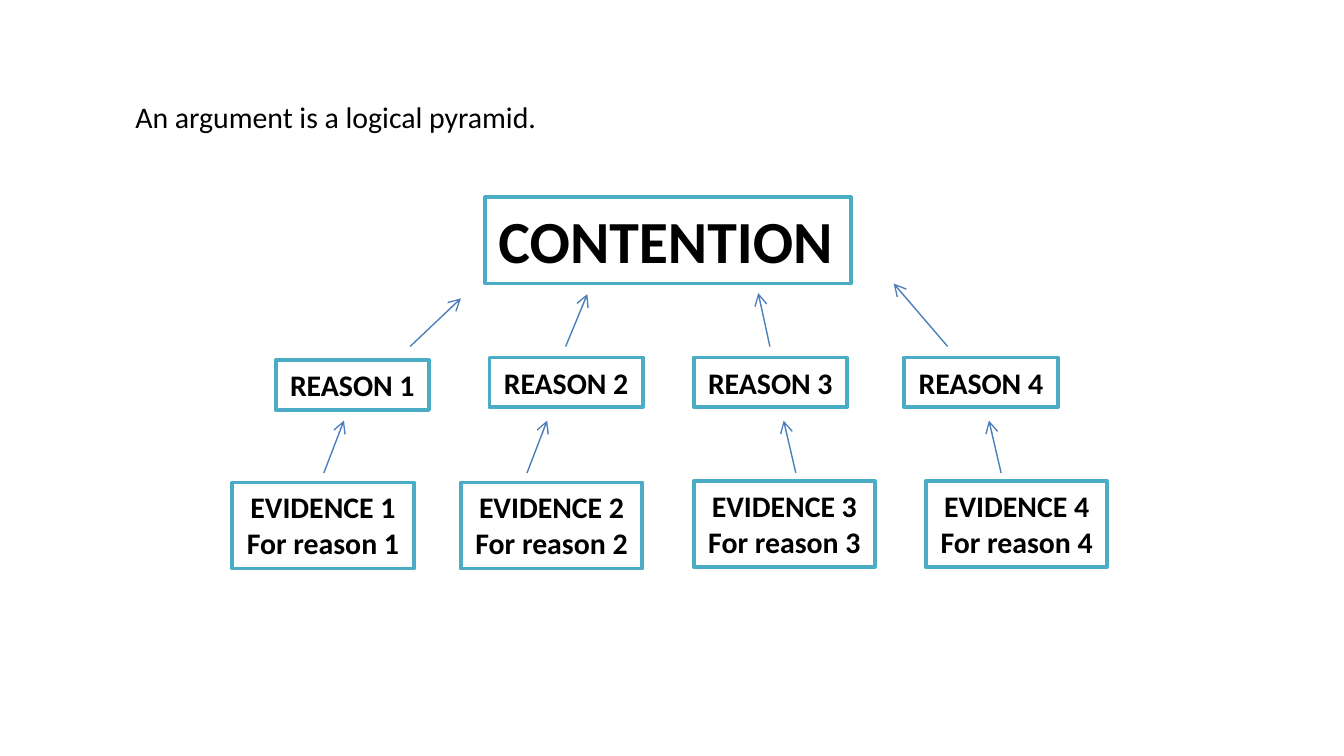
from pptx import Presentation
from pptx.dml.color import RGBColor
from pptx.enum.shapes import MSO_CONNECTOR, MSO_SHAPE
from pptx.enum.text import MSO_ANCHOR, PP_ALIGN
from pptx.oxml.ns import qn
from pptx.util import Cm, Pt
from lxml.etree import SubElement

BLACK = RGBColor(0x00, 0x00, 0x00)
WHITE = RGBColor(0xFF, 0xFF, 0xFF)
TEAL = RGBColor(0x4B, 0xAC, 0xC6)
BLUE = RGBColor(0x4B, 0x7E, 0xBC)
FONT = "Calibri"

TITLE = "An argument is a logical pyramid."
CONTENTION = "CONTENTION"

# All lengths in centimetres
REASON_SIZE = (2.9, 0.94)
EVIDENCE_SIZE = (3.43, 1.63)
REASON_BASE = 6.55      # where arrows leave the reasons
EVIDENCE_BASE = 8.94    # where arrows leave the evidence
EVIDENCE_TIP = 7.95

# One entry per branch: corners of both boxes, arrow start x and arrow tip
BRANCHES = [
    {"reason": (5.21, 6.81), "evidence": (4.39, 9.12),
     "reason_arrow": (7.75, 8.71, 5.64), "evidence_arrow": (6.12, 6.5)},
    {"reason": (9.25, 6.76), "evidence": (8.71, 9.12),
     "reason_arrow": (10.69, 11.1, 5.56), "evidence_arrow": (9.96, 10.34)},
    {"reason": (13.11, 6.76), "evidence": (13.11, 9.09),
     "reason_arrow": (14.55, 14.33, 5.54), "evidence_arrow": (15.04, 14.81)},
    {"reason": (17.09, 6.76), "evidence": (17.5, 9.09),
     "reason_arrow": (17.91, 16.89, 5.36), "evidence_arrow": (18.92, 18.69)},
]


def write_text(shape, text, size=16, bold=False, align=PP_ALIGN.LEFT, wrap=True):
    frame = shape.text_frame
    frame.word_wrap = wrap
    frame.vertical_anchor = MSO_ANCHOR.TOP
    frame.text = text
    for paragraph in frame.paragraphs:
        paragraph.alignment = align
        font = paragraph.font
        font.name, font.size, font.bold = FONT, Pt(size), bold
        font.color.rgb = BLACK


def add_box(slide, corner, extent, text, **text_format):
    box = slide.shapes.add_shape(
        MSO_SHAPE.RECTANGLE, *(Cm(value) for value in (*corner, *extent)))
    box.shadow.inherit = False
    box.fill.solid()
    box.fill.fore_color.rgb = WHITE
    box.line.color.rgb = TEAL
    box.line.width = Pt(2)
    write_text(box, text, bold=True, **text_format)


def add_arrow(slide, start, tip):
    arrow = slide.shapes.add_connector(
        MSO_CONNECTOR.STRAIGHT, *(Cm(value) for value in (*start, *tip)))
    arrow.line.color.rgb = BLUE
    arrow.line.width = Pt(0.75)
    properties = arrow._element.spPr
    SubElement(properties.find(qn("a:ln")), qn("a:tailEnd"), type="arrow")
    SubElement(properties, qn("a:effectLst"))


def main():
    presentation = Presentation()
    presentation.slide_width, presentation.slide_height = Cm(25.4), Cm(14.29)
    slide = presentation.slides.add_slide(presentation.slide_layouts[6])

    title = slide.shapes.add_textbox(Cm(2.31), Cm(1.75), Cm(21.21), Cm(4.37))
    write_text(title, TITLE)
    add_box(slide, (9.17, 3.73), (6.91, 1.63), CONTENTION, size=32)

    centred = {"align": PP_ALIGN.CENTER, "wrap": False}
    for number, branch in enumerate(BRANCHES, start=1):
        add_box(slide, branch["evidence"], EVIDENCE_SIZE,
                f"EVIDENCE {number}\nFor reason {number}", **centred)
        add_box(slide, branch["reason"], REASON_SIZE,
                f"REASON {number}", **centred)
        start_x, tip_x = branch["evidence_arrow"]
        add_arrow(slide, (start_x, EVIDENCE_BASE), (tip_x, EVIDENCE_TIP))
        start_x, *tip = branch["reason_arrow"]
        add_arrow(slide, (start_x, REASON_BASE), tip)

    presentation.save("out.pptx")


if __name__ == "__main__":
    main()
